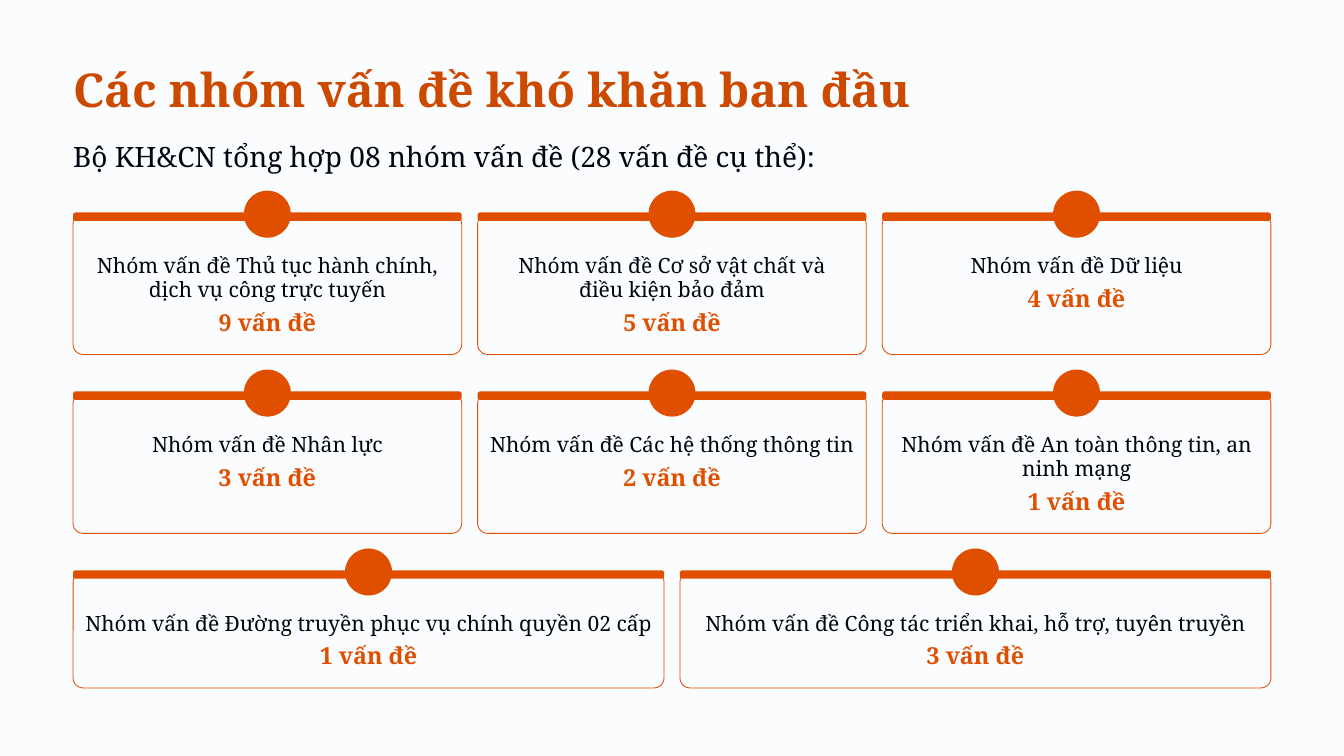
from pptx import Presentation
from pptx.dml.color import RGBColor
from pptx.enum.shapes import MSO_SHAPE as Preset
from pptx.enum.text import PP_ALIGN as Align
from pptx.util import Inches, Pt

hex_color = RGBColor.from_string
PAPER, INK, ORANGE, TITLE_ORANGE = "FBFCFE", "010511", "E04F00", "CC4900"

MARGIN, GAP, CONTENT_WIDTH = 0.87, 0.19, 14.26
FIRST_ROW_TOP, ROW_STEP = 2.55, 2.13
INSET, BAR_HEIGHT, DOT_SIZE = 0.21, 0.1, 0.56
LABEL_OFFSET, LABEL_LINE, COUNT_HEIGHT = 0.47, 0.29, 0.3
CORNER = 0.12

# text size, line spacing, colour, bold, alignment
TITLE = (40, 41.5, TITLE_ORANGE, True, Align.LEFT)
INTRO = (24, 21, INK, False, Align.LEFT)
LABEL = (18, 20.5, INK, False, Align.CENTER)
COUNT = (20, 21, ORANGE, True, Align.CENTER)

# each card: label, number of label lines, count
ROWS = [
    [("Nhóm vấn đề Thủ tục hành chính, dịch vụ công trực tuyến", 2, "9 vấn đề"),
     ("Nhóm vấn đề Cơ sở vật chất và điều kiện bảo đảm", 2, "5 vấn đề"),
     ("Nhóm vấn đề Dữ liệu", 1, "4 vấn đề")],
    [("Nhóm vấn đề Nhân lực", 1, "3 vấn đề"),
     ("Nhóm vấn đề Các hệ thống thông tin", 1, "2 vấn đề"),
     ("Nhóm vấn đề An toàn thông tin, an ninh mạng", 2, "1 vấn đề")],
    [("Nhóm vấn đề Đường truyền phục vụ chính quyền 02 cấp", 1, "1 vấn đề"),
     ("Nhóm vấn đề Công tác triển khai, hỗ trợ, tuyên truyền", 1, "3 vấn đề")],
]

presentation = Presentation()
presentation.slide_width, presentation.slide_height = Inches(16), Inches(9)
slide = presentation.slides.add_slide(presentation.slide_layouts[6])
slide.background.fill.solid()
slide.background.fill.fore_color.rgb = hex_color(PAPER)


def add_text(text, left, top, width, height, style):
    size, spacing, color, bold, alignment = style
    box = slide.shapes.add_textbox(*map(Inches, (left, top, width, height)))
    frame = box.text_frame
    frame.word_wrap = True
    for side in ("left", "top", "right", "bottom"):
        setattr(frame, f"margin_{side}", 0)
    paragraph = frame.paragraphs[0]
    paragraph.alignment = alignment
    paragraph.line_spacing = Pt(spacing)
    run = paragraph.add_run()
    run.text = text
    for name, value in {"name": "Noto Serif", "size": Pt(size), "bold": bold}.items():
        setattr(run.font, name, value)
    run.font.color.rgb = hex_color(color)


def add_rounded(left, top, width, height, corner, fill, line=None):
    """Add a rounded rectangle; corner is a share of its shorter side."""
    shape = slide.shapes.add_shape(
        Preset.ROUNDED_RECTANGLE, *map(Inches, (left, top, width, height)))
    shape.shadow.inherit = False
    shape.adjustments[0] = corner
    shape.fill.solid()
    shape.fill.fore_color.rgb = hex_color(fill)
    if line:
        shape.line.color.rgb = hex_color(line)
        shape.line.width = Pt(0.75)
    else:
        shape.line.fill.background()


add_text("Các nhóm vấn đề khó khăn ban đầu",
         MARGIN, 0.81, CONTENT_WIDTH, 0.58, TITLE)
add_text("Bộ KH&CN tổng hợp 08 nhóm vấn đề (28 vấn đề cụ thể):",
         MARGIN, 1.77, CONTENT_WIDTH, COUNT_HEIGHT, INTRO)

for row, cards in enumerate(ROWS):
    top = FIRST_ROW_TOP + row * ROW_STEP
    width = (CONTENT_WIDTH - GAP * (len(cards) - 1)) / len(cards)
    most_lines = max(lines for _, lines, _ in cards)
    height = 1.09 + LABEL_LINE * most_lines
    for column, (label, lines, count) in enumerate(cards):
        left = MARGIN + column * (width + GAP)
        add_rounded(left, top, width, height, CORNER / height, PAPER, ORANGE)
        add_rounded(left, top - 0.02, width, BAR_HEIGHT, 0.28, ORANGE)
        add_rounded(left + (width - DOT_SIZE) / 2, top - DOT_SIZE / 2,
                    DOT_SIZE, DOT_SIZE, 0.5, ORANGE)
        # a one-line label may use the full width of its card
        label_inset = INSET if lines > 1 else 0
        label_height = LABEL_LINE * lines
        add_text(label, left + label_inset, top + LABEL_OFFSET,
                 width - 2 * label_inset, label_height, LABEL)
        add_text(count, left + INSET, top + LABEL_OFFSET + label_height + 0.11,
                 width - 2 * INSET, COUNT_HEIGHT, COUNT)

presentation.save("out.pptx")
